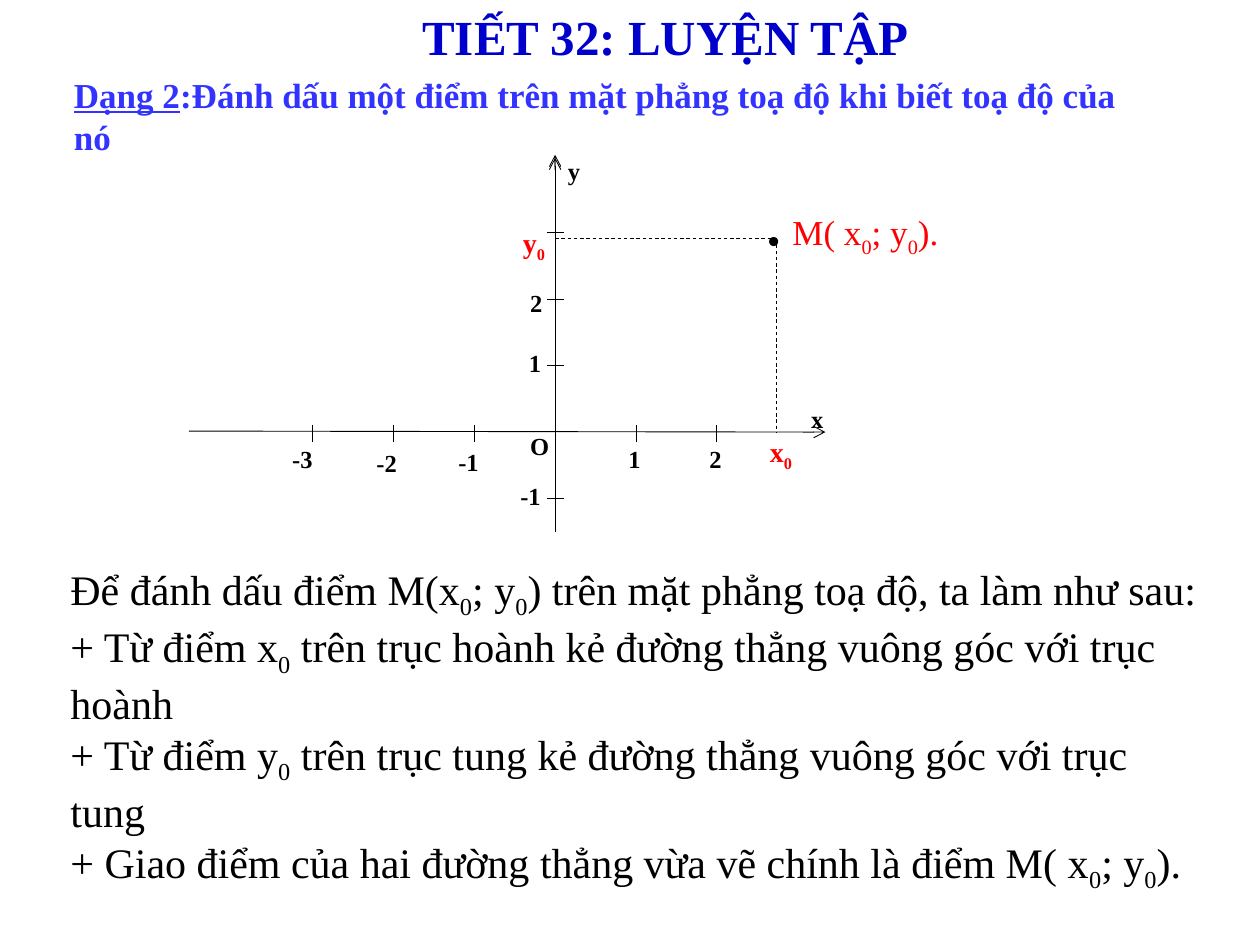
from dataclasses import dataclass
from pptx import Presentation
from pptx.dml.color import RGBColor
from pptx.enum.dml import MSO_LINE_DASH_STYLE as Dash
from pptx.enum.shapes import MSO_CONNECTOR as Connector
from pptx.enum.text import MSO_ANCHOR as Anchor, MSO_AUTO_SIZE as AutoSize, PP_ALIGN as Align
from pptx.oxml.ns import qn
from pptx.util import Cm, Pt
from lxml.etree import SubElement


@dataclass(frozen=True)
class Theme:
    """Font, colours and type sizes of the lesson."""
    font: str = "Times New Roman"
    ink: str = "000000"
    title: str = "0000CC"
    heading: str = "3333FF"
    accent: str = "FF0000"
    title_size: int = 28
    heading_size: int = 20
    body_size: int = 24
    tick_size: int = 14
    coordinate_size: int = 16
    dot_size: int = 44
    line_width: float = 0.5


THEME = Theme()
ORIGIN_X, ORIGIN_Y = 11.19, 8.71
STEP_X, STEP_Y = 1.63, 1.34
POINT_X, POINT_Y = 15.65, 4.8

TICK_LABELS = [
    ("1", 12.42, 8.79), ("2", 14.05, 8.79),
    ("-1", 8.99, 8.84), ("-2", 7.34, 8.86), ("-3", 5.64, 8.79),
    ("O", 10.44, 8.53), ("2", 10.44, 5.64), ("1", 10.41, 6.86), ("-1", 10.24, 9.53),
    ("y", 11.2, 2.97), ("x", 16.1, 7.98),
]
COORDINATE_LABELS = [("x_0", 15.27, 8.59), ("y_0", 10.29, 4.37)]
STEPS = [
    "Để đánh dấu điểm M(x_0; y_0) trên mặt phẳng toạ độ, ta làm như sau:",
    "+ Từ điểm x_0 trên trục hoành kẻ đường thẳng vuông góc với trục hoành",
    "+ Từ điểm y_0 trên trục tung kẻ đường thẳng vuông góc với trục tung",
    "+ Giao điểm của hai đường thẳng vừa vẽ chính là điểm M( x_0; y_0).",
]


def write(paragraph, text, size=THEME.body_size, color=THEME.ink, bold=False, underline=False):
    """Append text to a paragraph, setting each _0 as a subscript zero."""
    for index, part in enumerate(text.split("_0")):
        for content, subscript in (("0", True), (part, False)):
            if not content or (subscript and index == 0):
                continue
            run = paragraph.add_run()
            run.text = content
            font = run.font
            font.name, font.size, font.bold = THEME.font, Pt(size), bold
            font.underline = underline
            font.color.rgb = RGBColor.from_string(color)
            if subscript:
                font._element.set("baseline", "-25000")


def add_text_frame(slide, left, top, width, height, wrap=True):
    """Add a text box and return its frame."""
    frame = slide.shapes.add_textbox(Cm(left), Cm(top), Cm(width), Cm(height)).text_frame
    frame.word_wrap = wrap
    return frame


def add_label(slide, text, left, top, **style):
    """Add a small bold label of the diagram."""
    paragraph = add_text_frame(slide, left, top, 1.3, 1.02).paragraphs[0]
    paragraph.line_spacing, paragraph.space_after = 1.07, Pt(8)
    write(paragraph, text, bold=True, **style)


def add_line(slide, start, end, dashed=False, arrow=False):
    """Add a thin straight line between two points."""
    connector = slide.shapes.add_connector(
        Connector.STRAIGHT, *(Cm(value) for value in (*start, *end)))
    line = connector.line
    line.width = Pt(THEME.line_width)
    line.color.rgb = RGBColor.from_string(THEME.ink)
    if dashed:
        line.dash_style = Dash.DASH
    if arrow:
        SubElement(line._get_or_add_ln(), qn("a:tailEnd"), type="arrow")
    SubElement(connector._element.spPr, qn("a:effectLst"))


def add_title(slide):
    """Place and fill the title placeholder."""
    title = slide.shapes.title
    title.left, title.top, title.width, title.height = Cm(8.26), Cm(0), Cm(10.8), Cm(1.45)
    frame = title.text_frame
    frame.auto_size, frame.vertical_anchor = AutoSize.NONE, Anchor.TOP
    frame.paragraphs[0].alignment = Align.LEFT
    write(frame.paragraphs[0], "TIẾT 32: LUYỆN TẬP",
          size=THEME.title_size, color=THEME.title, bold=True)


def add_heading(slide):
    """Add the heading with its underlined lead."""
    paragraph = add_text_frame(slide, 1.24, 1.35, 22.4, 1.12, wrap=False).paragraphs[0]
    style = dict(size=THEME.heading_size, color=THEME.heading, bold=True)
    write(paragraph, "Dạng 2", underline=True, **style)
    write(paragraph, ":Đánh dấu một điểm trên mặt phẳng toạ độ khi biết toạ độ của nó", **style)


def add_axes(slide):
    """Draw the guides, axes and tick marks."""
    add_line(slide, (ORIGIN_X, POINT_Y), (15.55, POINT_Y), dashed=True)
    add_line(slide, (POINT_X, POINT_Y), (POINT_X, ORIGIN_Y), dashed=True)
    for tip in (3.12, 3.18):
        add_line(slide, (ORIGIN_X, 10.72), (ORIGIN_X, tip), arrow=True)
    add_line(slide, (3.81, 8.69), (16.64, ORIGIN_Y), arrow=True)
    for number in (-3, -2, -1, 1, 2):
        x = ORIGIN_X + number * STEP_X
        add_line(slide, (x, 8.56), (x, 8.92))
    for number in (-1, 1, 2, 3):
        y = ORIGIN_Y - number * STEP_Y
        add_line(slide, (ORIGIN_X - 0.17, y), (ORIGIN_X + 0.17, y))


def add_labels(slide):
    """Label the ticks, the coordinates and the point M."""
    for text, left, top in TICK_LABELS:
        add_label(slide, text, left, top, size=THEME.tick_size)
    for text, left, top in COORDINATE_LABELS:
        add_label(slide, text, left, top, size=THEME.coordinate_size, color=THEME.accent)
    paragraph = add_text_frame(slide, 15.16, 3.28, 5.94, 2.13).paragraphs[0]
    write(paragraph, ".", size=THEME.dot_size)
    write(paragraph, " M( x_0; y_0).", size=THEME.heading_size, color=THEME.accent)


def add_steps(slide):
    """Write the method below the diagram."""
    frame = add_text_frame(slide, 1.17, 11.23, 23.29, 6.4)
    for index, step in enumerate(STEPS):
        write(frame.add_paragraph() if index else frame.paragraphs[0], step)


def main():
    """Build and save the slide."""
    presentation = Presentation()
    presentation.slide_width, presentation.slide_height = Cm(25.4), Cm(19.05)
    slide = presentation.slides.add_slide(presentation.slide_layouts[5])
    add_axes(slide)
    add_labels(slide)
    add_steps(slide)
    add_heading(slide)
    add_title(slide)
    presentation.save("out.pptx")


if __name__ == "__main__":
    main()
